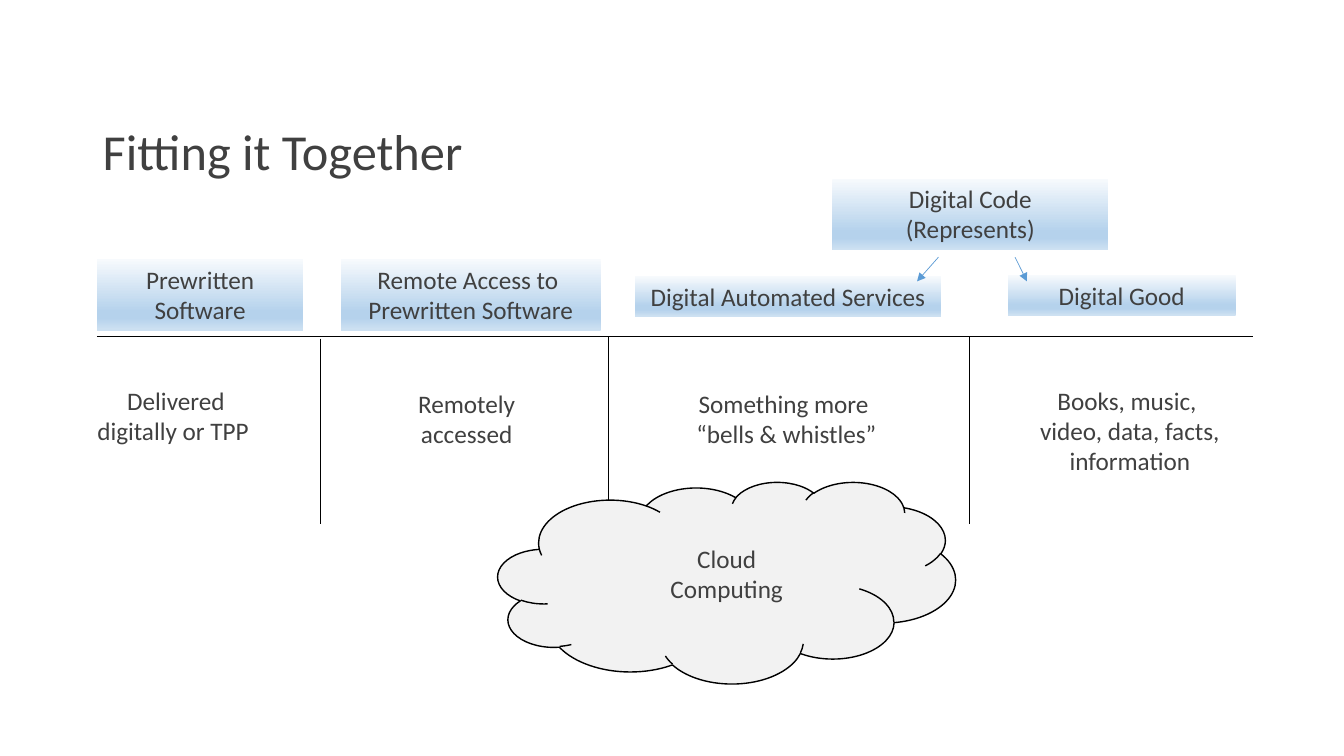
"""Build a slide that sorts digital products into four tax columns."""
from dataclasses import dataclass

from lxml import etree
from pptx import Presentation, util as u
from pptx.dml.color import RGBColor
from pptx.enum import shapes, text
from pptx.oxml import ns

INK = RGBColor(0x40, 0x40, 0x40)
BLACK = RGBColor(0, 0, 0)
BLUE = RGBColor(0x5B, 0x9B, 0xD5)
CLOUD = RGBColor(0xF2, 0xF2, 0xF2)
PALE = RGBColor(0xF7, 0xFA, 0xFD)
SKY = RGBColor(0xB5, 0xD2, 0xEC)
MIST = RGBColor(0xCE, 0xE1, 0xF2)
STOPS = ((0, PALE), (74, SKY), (83, SKY), (100, MIST))


@dataclass(frozen=True)
class Label:
    left: float
    top: float
    width: float
    height: float
    lines: tuple[str, ...]


@dataclass(frozen=True)
class Line:
    x1: float
    y1: float
    x2: float
    y2: float
    color: RGBColor = BLACK
    arrow: bool = False


TITLE = Label(2.34, 1.02, 29.21, 3.68, ("Fitting it Together",))
HEADS = (
    Label(2.44, 6.53, 5.21, 1.8, ("Prewritten", "Software")),
    Label(8.59, 6.53, 6.55, 1.8, ("Remote Access to ", "Prewritten Software")),
    Label(16, 6.96, 7.72, 1.02, ("Digital Automated Services",)),
    Label(20.98, 4.5, 6.95, 1.8, ("Digital Code (Represents)",)),
    Label(25.4, 6.93, 5.74, 1.02, ("Digital Good",)),
)
NOTES = (
    Label(1.96, 9.58, 4.95, 1.8, ("Delivered digitally or TPP ",)),
    Label(9.93, 9.65, 3.66, 1.8, ("Remotely", "accessed")),
    Label(15.44, 9.65, 8.76, 1.8, ("Something more ", "“bells & whistles”")),
    Label(25.4, 9.58, 6.15, 2.57,
          ("Books, music, ", "video, data, facts, information")),
)
SKY_NOTE = Label(16.56, 13.56, 3.51, 1.8, ("Cloud", "Computing"))
LINES = (
    Line(2.44, 8.48, 31.57, 8.48),
    Line(8.08, 8.53, 8.08, 13.21),
    Line(15.34, 8.48, 15.34, 13.21),
    Line(24.43, 8.48, 24.43, 13.21),
    Line(23.65, 6.48, 23.11, 7.09, BLUE, True),
    Line(25.58, 6.48, 25.88, 7.09, BLUE, True),
)


def box(label: Label) -> tuple[u.Length, ...]:
    """Return the frame of a label."""
    return tuple(map(u.Cm, (label.left, label.top, label.width, label.height)))


def write(shape, lines: tuple[str, ...], size: int = 18) -> None:
    """Fill a shape with centred lines."""
    frame = shape.text_frame
    frame.word_wrap = True
    frame.auto_size = text.MSO_AUTO_SIZE.SHAPE_TO_FIT_TEXT
    frame.vertical_anchor = text.MSO_ANCHOR.TOP
    frame.text = "\n".join(lines)
    for para in frame.paragraphs:
        para.alignment = text.PP_ALIGN.CENTER
        para.font.name = "Calibri"
        para.font.size = u.Pt(size)
        para.font.color.rgb = INK


def add_title(slide) -> None:
    """Add the title, set at the foot of its box."""
    shape = slide.shapes.add_textbox(*box(TITLE))
    write(shape, TITLE.lines, 36)
    frame = shape.text_frame
    frame.auto_size = text.MSO_AUTO_SIZE.NONE
    frame.vertical_anchor = text.MSO_ANCHOR.BOTTOM
    frame.paragraphs[0].alignment = text.PP_ALIGN.LEFT
    frame.paragraphs[0].line_spacing = 0.9


def add_note(slide, label: Label) -> None:
    """Add plain text."""
    write(slide.shapes.add_textbox(*box(label)), label.lines)


def add_head(slide, label: Label) -> None:
    """Add a heading on a blue gradient."""
    shape = slide.shapes.add_shape(shapes.MSO_SHAPE.RECTANGLE, *box(label))
    shape.shadow.inherit = False
    shape.line.fill.background()
    shape.fill.gradient()
    shape.fill.gradient_angle = 270
    stops = shape.fill._fill._gradFill.find(ns.qn("a:gsLst"))
    for stop in list(stops):
        stops.remove(stop)
    for spot, color in STOPS:
        stop = etree.SubElement(stops, ns.qn("a:gs"), pos=str(spot * 1000))
        etree.SubElement(stop, ns.qn("a:srgbClr"), val=str(color))
    write(shape, label.lines)


def add_line(slide, line: Line) -> None:
    """Add a thin line or arrow."""
    ends = map(u.Cm, (line.x1, line.y1, line.x2, line.y2))
    link = slide.shapes.add_connector(shapes.MSO_CONNECTOR.STRAIGHT, *ends)
    link.line.color.rgb = line.color
    link.line.width = u.Pt(0.5)
    if line.arrow:
        etree.SubElement(link.line._get_or_add_ln(), ns.qn("a:tailEnd"),
                         type="triangle")
    etree.SubElement(link._element.spPr, ns.qn("a:effectLst"))


def add_cloud(slide) -> None:
    """Add the cloud that spans the middle columns."""
    frame = map(u.Cm, (12.55, 12.14, 11.53, 5.08))
    cloud = slide.shapes.add_shape(shapes.MSO_SHAPE.CLOUD, *frame)
    cloud.shadow.inherit = False
    cloud.fill.solid()
    cloud.fill.fore_color.rgb = CLOUD
    cloud.line.color.rgb = BLACK
    cloud.line.width = u.Pt(1)


def main() -> None:
    """Draw the slide and save it."""
    deck = Presentation()
    deck.slide_width, deck.slide_height = u.Cm(33.87), u.Cm(19.05)
    slide = deck.slides.add_slide(deck.slide_layouts[6])
    add_title(slide)
    for head in HEADS:
        add_head(slide, head)
    for line in LINES:
        add_line(slide, line)
    for note in NOTES:
        add_note(slide, note)
    add_cloud(slide)
    add_note(slide, SKY_NOTE)
    deck.save("out.pptx")


if __name__ == "__main__":
    main()
